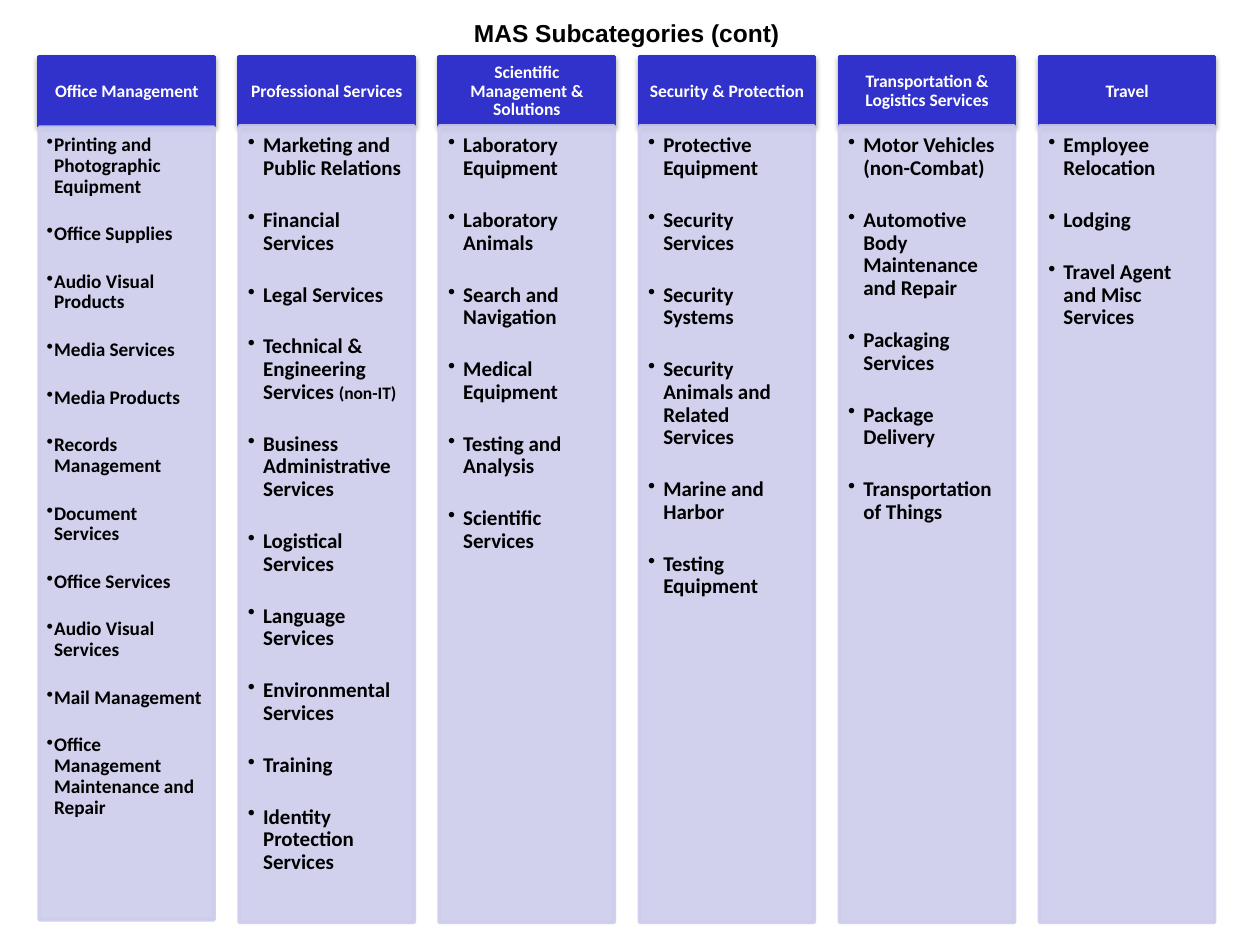
from dataclasses import dataclass

import pptx
import pptx.dml.color
import pptx.enum.shapes
import pptx.enum.text
import pptx.oxml
import pptx.oxml.ns
import pptx.util
from lxml import etree

Inches, Pt = pptx.util.Inches, pptx.util.Pt
ALIGN, ANCHOR = pptx.enum.text.PP_ALIGN, pptx.enum.text.MSO_ANCHOR


@dataclass(frozen=True)
class Theme:
    header: str = "3131CB"
    body: str = "CCCCEC"
    ink: str = "000000"
    paper: str = "FFFFFF"
    title_font: str = "Arial"
    font: str = "Calibri"
    title_size: float = 14
    header_size: float = 10
    note_size: float = 10
    line_width: float = 2
    line_spacing: float = 0.9
    body_alpha: int = 89


@dataclass(frozen=True)
class Grid:
    first: float = 0.31
    last: float = 8.25
    columns: int = 6
    width: float = 1.39
    header_top: float = 0.45
    header_height: float = 0.55

    def left(self, col: int) -> float:
        return self.first + col * (self.last - self.first) / (self.columns - 1)


@dataclass(frozen=True)
class ListStyle:
    top: float
    height: float
    size: float
    gap: float
    indent: float
    inset: float


@dataclass(frozen=True)
class Category:
    name: str
    items: tuple[str, ...]
    style: ListStyle
    notes: tuple[tuple[str, str], ...] = ()


THEME, GRID = Theme(), Grid()
REGULAR = ListStyle(top=1, height=6.32, size=12, gap=16.7, indent=0.12, inset=0.07)
COMPACT = ListStyle(top=1.01, height=6.29, size=11, gap=15.3, indent=0.06, inset=0.06)

CATEGORIES = (
    Category("Office Management", (
        "Printing and Photographic Equipment", "Office Supplies", "Audio Visual Products",
        "Media Services", "Media Products", "Records Management", "Document Services",
        "Office Services", "Audio Visual Services", "Mail Management",
        "Office Management Maintenance and Repair"), COMPACT),
    Category("Professional Services", (
        "Marketing and Public Relations", "Financial Services", "Legal Services",
        "Technical & Engineering Services", "Business Administrative Services",
        "Logistical Services", "Language Services", "Environmental Services", "Training",
        "Identity Protection Services"), REGULAR,
        notes=(("Technical & Engineering Services", "(non-IT)"),)),
    Category("Scientific Management & Solutions", (
        "Laboratory Equipment", "Laboratory Animals", "Search and Navigation",
        "Medical Equipment", "Testing and Analysis", "Scientific Services"), REGULAR),
    Category("Security & Protection", (
        "Protective Equipment", "Security Services", "Security Systems",
        "Security Animals and Related Services", "Marine and Harbor",
        "Testing Equipment"), REGULAR),
    Category("Transportation & Logistics Services", (
        "Motor Vehicles (non-Combat)", "Automotive Body Maintenance and Repair",
        "Packaging Services", "Package Delivery", "Transportation of Things"), REGULAR),
    Category("Travel", (
        "Employee Relocation", "Lodging", "Travel Agent and Misc Services"), REGULAR),
)


def add_xml(parent, tag: str, **attrs):
    return etree.SubElement(parent, pptx.oxml.ns.qn(tag), attrs)


def set_font(font, name: str, size: float, color: str) -> None:
    font.name, font.size, font.bold = name, Pt(size), True
    font.color.rgb = pptx.dml.color.RGBColor.from_string(color)


def set_frame(tf, insets: tuple[float, ...], anchor) -> None:
    tf.word_wrap, tf.vertical_anchor = True, anchor
    tf.margin_left, tf.margin_top, tf.margin_right, tf.margin_bottom = map(Inches, insets)


def add_block(s, col: int, top: float, height: float, color: str):
    sp = s.shapes.add_shape(
        pptx.enum.shapes.MSO_SHAPE.RECTANGLE, Inches(GRID.left(col)), Inches(top),
        Inches(GRID.width), Inches(height))
    sp.shadow.inherit = False
    sp.line.width = Pt(THEME.line_width)
    for fill in (sp.fill, sp.line.fill):
        fill.solid()
        fill.fore_color.rgb = pptx.dml.color.RGBColor.from_string(color)
    return sp


def add_header(s, col: int, category: Category) -> None:
    sp = add_block(s, col, GRID.header_top, GRID.header_height, THEME.header)
    effects = sp._element.spPr.find(pptx.oxml.ns.qn("a:effectLst"))
    shadow = add_xml(effects, "a:outerShdw", blurRad=str(Pt(3.1)), dist=str(Pt(1.6)),
                     dir="5400000", rotWithShape="0")
    add_xml(add_xml(shadow, "a:srgbClr", val=THEME.ink), "a:alpha", val="37000")
    set_frame(sp.text_frame, (0.08, 0.04, 0.08, 0.04), ANCHOR.MIDDLE)
    p = sp.text_frame.paragraphs[0]
    p.text, p.alignment, p.line_spacing = category.name, ALIGN.CENTER, THEME.line_spacing
    set_font(p.font, THEME.font, THEME.header_size, THEME.paper)


def add_list(s, col: int, category: Category) -> None:
    style, notes = category.style, dict(category.notes)
    sp = add_block(s, col, style.top, style.height, THEME.body)
    for color in sp._element.spPr.iter(pptx.oxml.ns.qn("a:srgbClr")):
        add_xml(color, "a:alpha", val=str(THEME.body_alpha * 1000))
    tf = sp.text_frame
    set_frame(tf, (style.inset, style.inset, 0.09, 0.1), ANCHOR.TOP)
    for i, item in enumerate(category.items):
        p = tf.add_paragraph() if i else tf.paragraphs[0]
        p.alignment, p.line_spacing = ALIGN.LEFT, THEME.line_spacing
        if i:
            p.space_before = Pt(style.gap)
        pPr = p._p.get_or_add_pPr()
        pPr.set("marL", str(Inches(style.indent)))
        pPr.set("indent", str(-Inches(style.indent)))
        add_xml(pPr, "a:buChar", char="•")
        set_font(p.font, THEME.font, style.size, THEME.ink)
        r = p.add_run()
        r.text = item
        if item in notes:
            r.text += " "
            r = p.add_run()
            r.text, r.font.size = notes[item], Pt(THEME.note_size)


def add_title(s, text: str) -> None:
    width = GRID.last + GRID.width - GRID.first
    sp = s.shapes.add_textbox(Inches(GRID.first), Inches(0.09), Inches(width), Inches(0.34))
    set_frame(sp.text_frame, (0.1, 0.05, 0.1, 0.05), ANCHOR.TOP)
    p = sp.text_frame.paragraphs[0]
    p.text, p.alignment = text, ALIGN.CENTER
    set_font(p.font, THEME.title_font, THEME.title_size, THEME.ink)


def main() -> None:
    prs = pptx.Presentation()
    prs.slide_width, prs.slide_height = Inches(10), Inches(7.5)
    s = prs.slides.add_slide(prs.slide_layouts[6])

    # Category columns: header above its bulleted list
    for col, category in enumerate(CATEGORIES):
        add_header(s, col, category)
        add_list(s, col, category)

    # Title
    add_title(s, "MAS Subcategories (cont)")
    prs.save("out.pptx")


if __name__ == "__main__":
    main()
